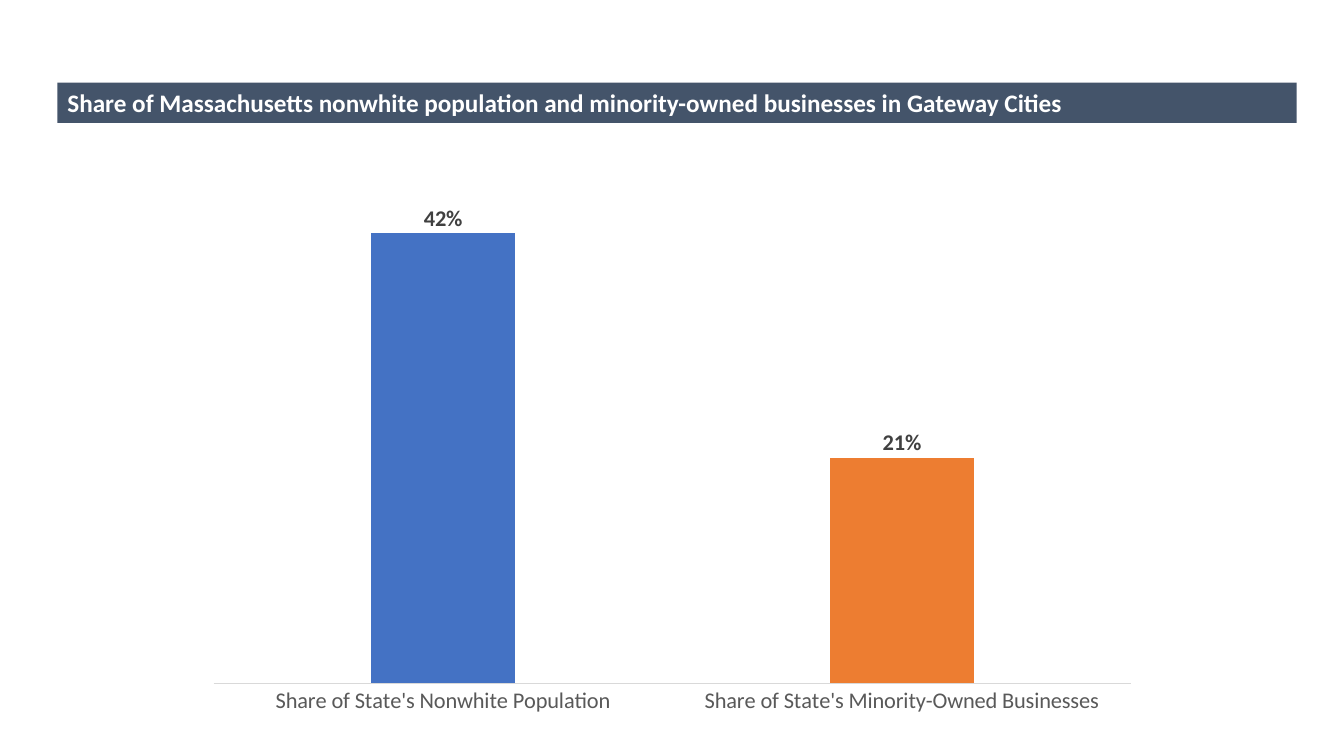
from pptx import Presentation
from pptx.chart.data import CategoryChartData
from pptx.dml.color import RGBColor
from pptx.enum.chart import XL_CHART_TYPE as ChartType, XL_LABEL_POSITION as LabelPos, XL_TICK_MARK as Tick
from pptx.enum.shapes import MSO_SHAPE as Shape
from pptx.enum.text import MSO_ANCHOR as Anchor, PP_ALIGN as Align
from pptx.oxml import parse_xml
from pptx.oxml.ns import nsdecls
from pptx.util import Inches, Pt

THEME = {
    "font": "Calibri",
    "banner": RGBColor.from_string("44546A"),
    "banner_text": RGBColor.from_string("FFFFFF"),
    "bars": [RGBColor.from_string("4472C4"), RGBColor.from_string("ED7D31")],
    "axis_text": RGBColor.from_string("595959"),
    "axis_line": RGBColor.from_string("D9D9D9"),
    "label_text": RGBColor.from_string("404040"),
    "title_size": Pt(18),
    "chart_size": Pt(16),
}


def style(font, size, color, bold=False):
    font.name, font.size, font.bold = THEME["font"], size, bold
    font.color.rgb = color


def manual_layout(target="", **shares):
    """Return a chart layout whose lengths are shares of the chart's size."""
    inner = f'<c:layoutTarget val="{target}"/><c:xMode val="edge"/><c:yMode val="edge"/>' if target else ""
    inner += "".join(f'<c:{side} val="{share}"/>' for side, share in shares.items())
    return parse_xml(f'<c:layout {nsdecls("c")}><c:manualLayout>{inner}</c:manualLayout></c:layout>')


deck = Presentation()
deck.slide_width, deck.slide_height = Inches(13.33), Inches(7.5)
slide = deck.slides.add_slide(deck.slide_layouts[6])

# Title banner
banner = slide.shapes.add_shape(Shape.RECTANGLE, Inches(0.57), Inches(0.82), Inches(12.29), Inches(0.4))
banner.shadow.inherit = False
banner.fill.solid()
banner.fill.fore_color.rgb = THEME["banner"]
banner.line.fill.background()
banner.text_frame.word_wrap = True
banner.text_frame.vertical_anchor = Anchor.MIDDLE
title = banner.text_frame.paragraphs[0]
title.text = "Share of Massachusetts nonwhite population and minority-owned businesses in Gateway Cities"
title.alignment = Align.LEFT
style(title.font, THEME["title_size"], THEME["banner_text"], bold=True)

# Column chart
shares = CategoryChartData(number_format="0%")
shares.categories = ["Share of State's Nonwhite Population", "Share of State's Minority-Owned Businesses"]
shares.add_series("Series 1", [0.42, 0.21])
chart = slide.shapes.add_chart(
    ChartType.COLUMN_STACKED, Inches(1.93), Inches(1.94), Inches(9.48), Inches(5.26), shares
).chart
chart.has_legend = chart.has_title = False
style(chart.font, THEME["chart_size"], THEME["axis_text"])

value_axis = chart.value_axis
value_axis.minimum_scale, value_axis.maximum_scale = 0, 0.45
value_axis.has_major_gridlines = False
value_axis.visible = False

category_axis = chart.category_axis
category_axis.major_tick_mark = category_axis.minor_tick_mark = Tick.NONE
category_axis.format.line.color.rgb = THEME["axis_line"]
category_axis.format.line.width = Pt(0.75)
style(category_axis.tick_labels.font, THEME["chart_size"], THEME["axis_text"])

plot_area = chart._chartSpace.chart.plotArea
for automatic in plot_area.xpath("c:layout"):
    plot_area.remove(automatic)
plot_area.insert(0, manual_layout("inner", x=0.02, y=0.01, w=0.96, h=0.91))

plot = chart.plots[0]
plot.gap_width, plot.overlap = 219, 100
plot.vary_by_categories = False
columns = plot.series[0]
columns.format.fill.solid()
columns.format.fill.fore_color.rgb = THEME["bars"][0]
accent = columns.points[1].format.fill
accent.solid()
accent.fore_color.rgb = THEME["bars"][1]

labels = columns.data_labels
labels.show_value = True
labels.number_format, labels.number_format_is_linked = "0%", False
labels.position = LabelPos.CENTER
style(labels.font, THEME["chart_size"], THEME["label_text"], bold=True)

# Lift each centred label to just above its column, without leader lines
for index, lift in enumerate([0.45, 0.24]):
    label = columns.points[index].data_label
    label.position = LabelPos.CENTER
    style(label.font, THEME["chart_size"], THEME["label_text"], bold=True)
    label_xml = columns._element.xpath(f"c:dLbls/c:dLbl[c:idx/@val={index}]")[0]
    label_xml.insert(1, manual_layout(x=0, y=-lift))
for leader_lines in columns._element.xpath("c:dLbls/c:showLeaderLines"):
    leader_lines.set("val", "0")

deck.save("out.pptx")
